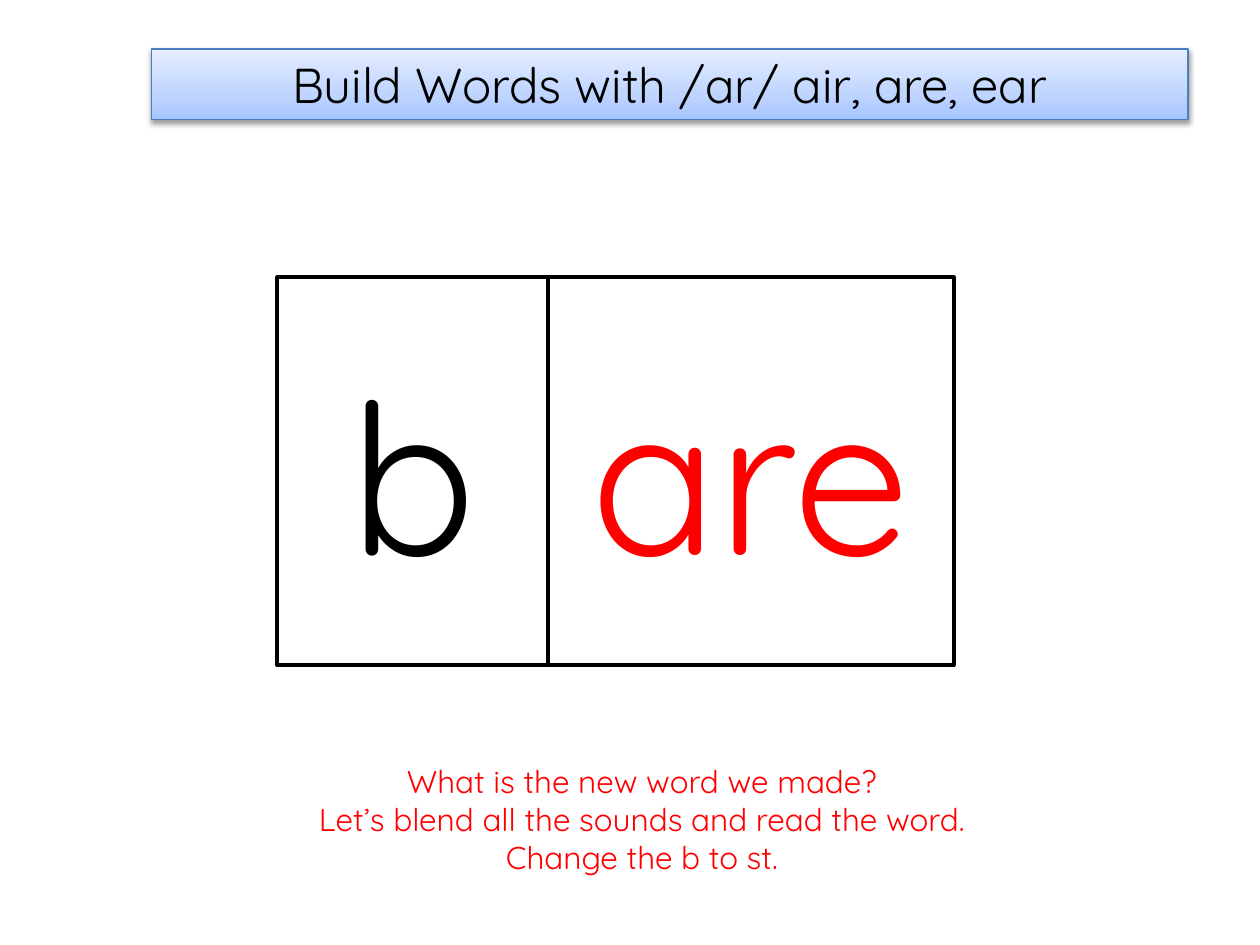
from dataclasses import dataclass

from lxml.etree import SubElement
from pptx import Presentation
from pptx.dml.color import RGBColor
from pptx.enum.shapes import MSO_SHAPE
from pptx.enum.text import MSO_ANCHOR, MSO_AUTO_SIZE, PP_ALIGN
from pptx.oxml.ns import qn
from pptx.shapes.autoshape import Shape
from pptx.slide import Slide
from pptx.util import Pt

FONT = "Quicksand"
BLACK = RGBColor(0x00, 0x00, 0x00)
WHITE = RGBColor(0xFF, 0xFF, 0xFF)
RED = RGBColor(0xFF, 0x00, 0x00)
BANNER_LINE = RGBColor(0x4B, 0x7E, 0xBC)
BANNER_STOPS = (
    (0, RGBColor(0xA4, 0xC4, 0xFF)),
    (35, RGBColor(0xBF, 0xD4, 0xFF)),
    (100, RGBColor(0xE6, 0xEE, 0xFF)),
)

TILE_LEFT, TILE_TOP, TILE_HEIGHT = 158.4, 158.4, 221.76


@dataclass(frozen=True)
class Tile:
    letters: str
    width: float
    color: RGBColor


TILES = (Tile("b", 154.8, BLACK), Tile("are", 231.84, RED))


def set_text(sp: Shape, text: str, size: float, color: RGBColor) -> None:
    tf = sp.text_frame
    tf.word_wrap = True
    tf.text = text
    for p in tf.paragraphs:
        p.alignment = PP_ALIGN.CENTER
        for r in p.runs:
            r.font.name = FONT
            r.font.size = Pt(size)
            r.font.color.rgb = color


def add_box(s: Slide, left: float, top: float, width: float, height: float,
            line: RGBColor, line_width: float) -> Shape:
    sp = s.shapes.add_shape(MSO_SHAPE.RECTANGLE, Pt(left), Pt(top), Pt(width), Pt(height))
    sp.shadow.inherit = False
    sp.line.color.rgb = line
    sp.line.width = Pt(line_width)
    sp.text_frame.vertical_anchor = MSO_ANCHOR.MIDDLE
    return sp


def fill_gradient(sp: Shape) -> None:
    """Fill with the banner stops, running from bottom to top."""
    sp.fill.gradient()
    sp.fill.gradient_angle = 90
    stops = sp.element.spPr.find(qn("a:gradFill")).find(qn("a:gsLst"))
    for stop in list(stops):
        stops.remove(stop)
    for position, color in BANNER_STOPS:
        stop = SubElement(stops, qn("a:gs"), pos=str(position * 1000))
        SubElement(stop, qn("a:srgbClr"), val=str(color))


def drop_shadow(sp: Shape) -> None:
    effects = sp.element.spPr.find(qn("a:effectLst"))
    shadow = SubElement(effects, qn("a:outerShdw"), blurRad=str(Pt(3.1)),
                        dist=str(Pt(1.6)), dir="5400000", rotWithShape="0")
    color = SubElement(shadow, qn("a:srgbClr"), val=str(BLACK))
    SubElement(color, qn("a:alpha"), val="38000")


def add_banner(s: Slide) -> None:
    sp = add_box(s, 86.4, 28.08, 592.56, 40.32, BANNER_LINE, 0.75)
    fill_gradient(sp)
    drop_shadow(sp)
    set_text(sp, "Build Words with /ar/ air, are, ear", 28, BLACK)


def add_tiles(s: Slide) -> None:
    left = TILE_LEFT
    for tile in TILES:
        sp = add_box(s, left, TILE_TOP, tile.width, TILE_HEIGHT, BLACK, 2)
        sp.fill.solid()
        sp.fill.fore_color.rgb = WHITE
        set_text(sp, tile.letters, 120, tile.color)
        left += tile.width


def add_prompts(s: Slide) -> None:
    sp = s.shapes.add_textbox(Pt(115.92), Pt(432), Pt(501.84), Pt(72.72))
    set_text(sp, "What is the new word we made?\n"
                 "Let’s blend all the sounds and read the word.\n"
                 "Change the b to st.", 18, RED)
    sp.text_frame.auto_size = MSO_AUTO_SIZE.SHAPE_TO_FIT_TEXT


def main() -> None:
    prs = Presentation()
    prs.slide_width, prs.slide_height = Pt(720), Pt(540)
    s = prs.slides.add_slide(prs.slide_layouts[6])
    add_banner(s)
    add_tiles(s)
    add_prompts(s)
    prs.save("out.pptx")


if __name__ == "__main__":
    main()
